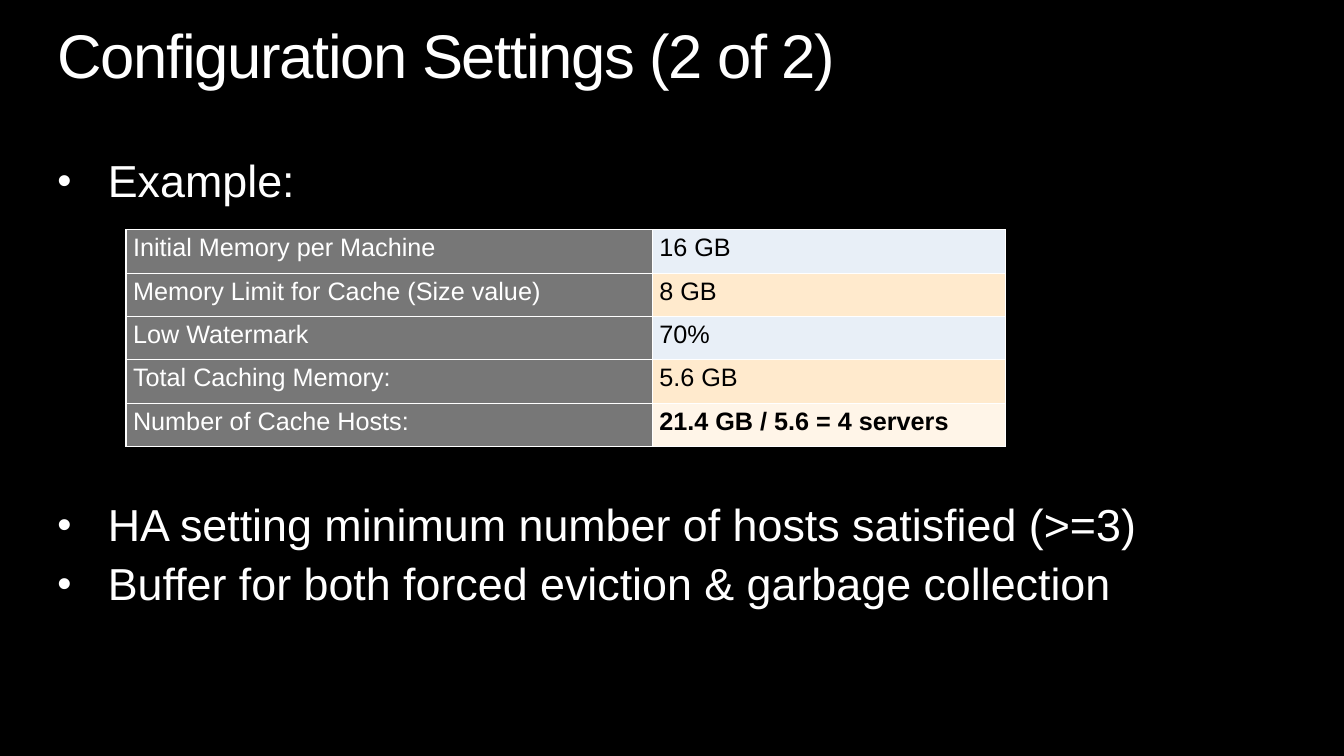
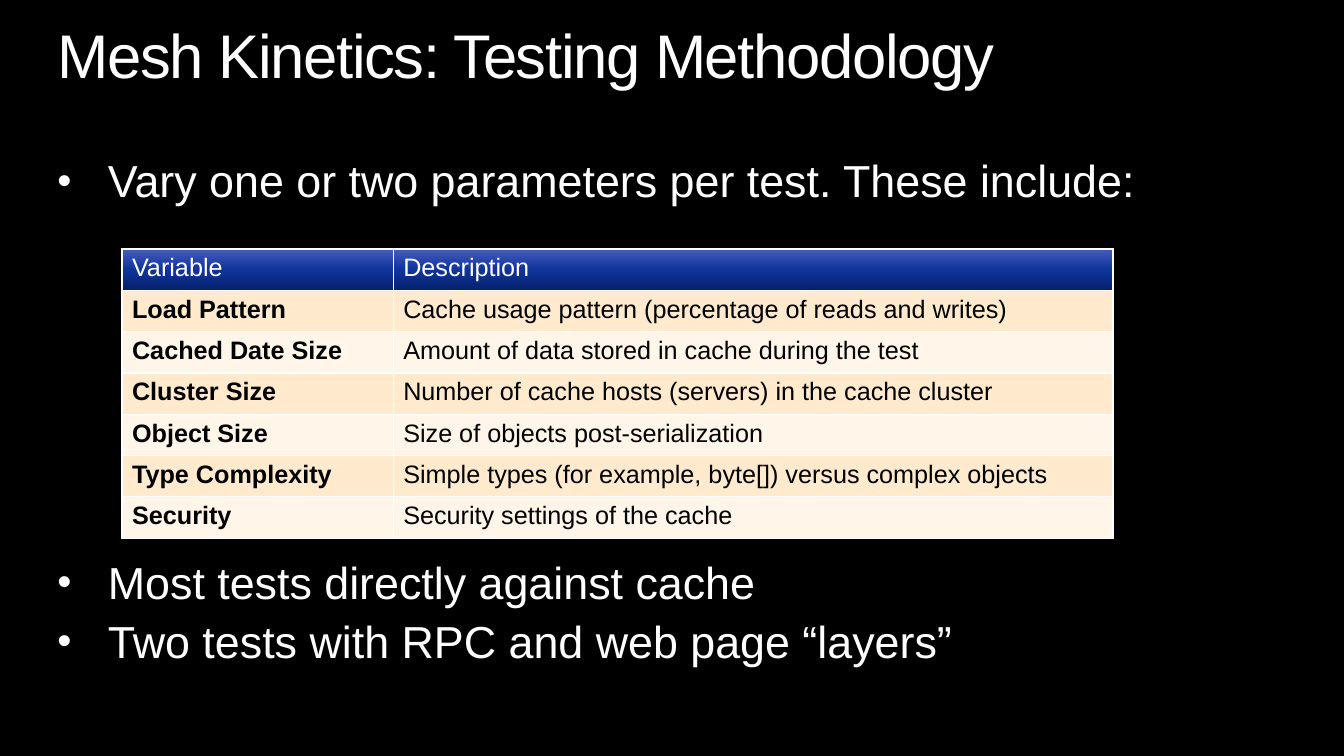
import pptx
import pptx.dml.color
import pptx.oxml
import pptx.oxml.ns
import pptx.util
from pptx.util import Inches, Pt

FONT = "Arial"
BLACK, WHITE, GRAY = "000000", "FFFFFF", "777777"
BLUE, PEACH, CREAM = "E8EFF7", "FFEACD", "FFF5E8"
HEADER_STOPS = [(0, "05216E"), (50, "0F3499"), (100, "465CC1")]
LEFT, WIDTH = 0.57, 12.19
TITLE_TOP, BODY_TOP = 0.25, 1.58
BULLET_PITCH = 0.57

SETTINGS = [
    ("Initial Memory per Machine", "16 GB", BLUE),
    ("Memory Limit for Cache (Size value)", "8 GB", PEACH),
    ("Low Watermark", "70%", BLUE),
    ("Total Caching Memory:", "5.6 GB", PEACH),
    ("Number of Cache Hosts:", "21.4 GB / 5.6 = 4 servers", CREAM),
]
VARIABLES = [
    ("Load Pattern", "Cache usage pattern (percentage of reads and writes)"),
    ("Cached Date Size", "Amount of data stored in cache during the test"),
    ("Cluster Size", "Number of cache hosts (servers) in the cache cluster"),
    ("Object Size", "Size of objects post-serialization"),
    ("Type Complexity", "Simple types (for example, byte[]) versus complex objects"),
    ("Security", "Security settings of the cache"),
]


# A cell is (text, fill, text colour, bold); a list as fill is a gradient.
def settings_rows():
    last = len(SETTINGS) - 1
    return [
        [(label, GRAY, WHITE, False), (value, fill, BLACK, index == last)]
        for index, (label, value, fill) in enumerate(SETTINGS)
    ]


def variable_rows():
    rows = [[(text, HEADER_STOPS, WHITE, False) for text in ("Variable", "Description")]]
    for index, (name, description) in enumerate(VARIABLES):
        fill = (PEACH, CREAM)[index % 2]
        rows.append([(name, fill, BLACK, True), (description, fill, BLACK, False)])
    return rows


SLIDES = [
    {
        "title": "Configuration Settings (2 of 2)",
        "intro": ["Example:"],
        "closing": [
            "HA setting minimum number of hosts satisfied (>=3)",
            "Buffer for both forced eviction & garbage collection",
        ],
        "closing_top": 4.99,
        "table": {
            "rows": settings_rows(), "at": (1.25, 2.28), "columns": (5.22, 3.5),
            "row_height": 0.43, "margins": (0.07, 0), "line_spacing": 1.15,
        },
    },
    {
        "title": "Mesh Kinetics: Testing Methodology",
        "intro": ["Vary one or two parameters per test. These include:"],
        "closing": [
            "Most tests directly against cache",
            "Two tests with RPC and web page “layers”",
        ],
        "closing_top": 5.56,
        "table": {
            "rows": variable_rows(), "at": (1.21, 2.47), "columns": (2.69, 7.14),
            "row_height": 0.41, "margins": (0.1, 0.05), "line_spacing": 1.0,
        },
    },
]


def rgb(color):
    return pptx.dml.color.RGBColor.from_string(color)


def element(tag, content="", attributes=""):
    """Build a DrawingML element from its tag, inner XML and attributes."""
    namespace = pptx.oxml.ns.nsdecls("a")
    return pptx.oxml.parse_xml(f"<a:{tag} {namespace} {attributes}>{content}</a:{tag}>")


def color_fill(color):
    return f'<a:solidFill><a:srgbClr val="{color}"/></a:solidFill>'


def style_font(paragraph, size, color, bold=False):
    paragraph.font.name = FONT
    paragraph.font.size = Pt(size)
    paragraph.font.bold = bold
    paragraph.font.color.rgb = rgb(color)


def add_text_box(page, top, height, lines, size):
    """Add a full-width box without insets and return its paragraphs."""
    box = page.shapes.add_textbox(Inches(LEFT), Inches(top), Inches(WIDTH), Inches(height))
    frame = box.text_frame
    frame.word_wrap = True
    frame.margin_left = frame.margin_right = frame.margin_top = frame.margin_bottom = 0
    frame.text = "\n".join(lines)
    for paragraph in frame.paragraphs:
        paragraph.line_spacing = 0.9
        style_font(paragraph, size, WHITE)
    return frame.paragraphs


def add_title(page, text):
    paragraph = add_text_box(page, TITLE_TOP, 0.67, [text], 44)[0]
    for span in paragraph.runs:
        span.font.size = Pt(44)
        span.font._element.set("spc", "-100")


def add_bullets(page, top, lines):
    paragraphs = add_text_box(page, top, BULLET_PITCH * len(lines), lines, 32)
    for index, paragraph in enumerate(paragraphs):
        if index:
            paragraph.space_before = Pt(7.5)
        properties = paragraph._p.get_or_add_pPr()
        properties.set("marL", str(Inches(0.5)))
        properties.set("indent", str(-Inches(0.5)))
        bullet_parts = [
            element("buSzPct", attributes='val="90000"'),
            element("buFont", attributes=f'typeface="{FONT}"'),
            element("buChar", attributes='char="•"'),
        ]
        defaults = properties.find(pptx.oxml.ns.qn("a:defRPr"))
        for part in bullet_parts:
            defaults.addprevious(part)


def paint_cell(cell, fill):
    properties = cell._tc.get_or_add_tcPr()
    for side in ("lnL", "lnR", "lnT", "lnB"):
        properties.append(element(side, color_fill(WHITE), f'w="{Pt(1)}"'))
    if isinstance(fill, list):
        stops = "".join(
            f'<a:gs pos="{percent * 1000}"><a:srgbClr val="{color}"/></a:gs>'
            for percent, color in fill
        )
        angle = 270 * 60000
        properties.append(
            element("gradFill", f'<a:gsLst>{stops}</a:gsLst><a:lin ang="{angle}" scaled="0"/>')
        )
    else:
        cell.fill.solid()
        cell.fill.fore_color.rgb = rgb(fill)


def add_table(page, rows, at, columns, row_height, margins, line_spacing):
    left, top = at
    table = page.shapes.add_table(
        len(rows), len(columns), Inches(left), Inches(top),
        Inches(sum(columns)), Inches(row_height * len(rows)),
    ).table
    table.first_row = table.horz_banding = False
    for column, width in zip(table.columns, columns):
        column.width = Inches(width)
    side_margin, end_margin = (Inches(margin) for margin in margins)
    for row, contents in zip(table.rows, rows):
        row.height = Inches(row_height)
        for cell, (text, fill, color, bold) in zip(row.cells, contents):
            cell.margin_left = cell.margin_right = side_margin
            cell.margin_top = cell.margin_bottom = end_margin
            cell.text = text
            paragraph = cell.text_frame.paragraphs[0]
            paragraph.line_spacing = line_spacing
            style_font(paragraph, 18, color, bold)
            paint_cell(cell, fill)


def main():
    deck = pptx.Presentation()
    deck.slide_width, deck.slide_height = Inches(13.33), Inches(7.5)
    for content in SLIDES:
        page = deck.slides.add_slide(deck.slide_layouts[6])
        page.background.fill.solid()
        page.background.fill.fore_color.rgb = rgb(BLACK)
        add_title(page, content["title"])
        add_bullets(page, BODY_TOP, content["intro"])
        add_table(page, **content["table"])
        add_bullets(page, content["closing_top"], content["closing"])
    deck.save("out.pptx")


if __name__ == "__main__":
    main()
